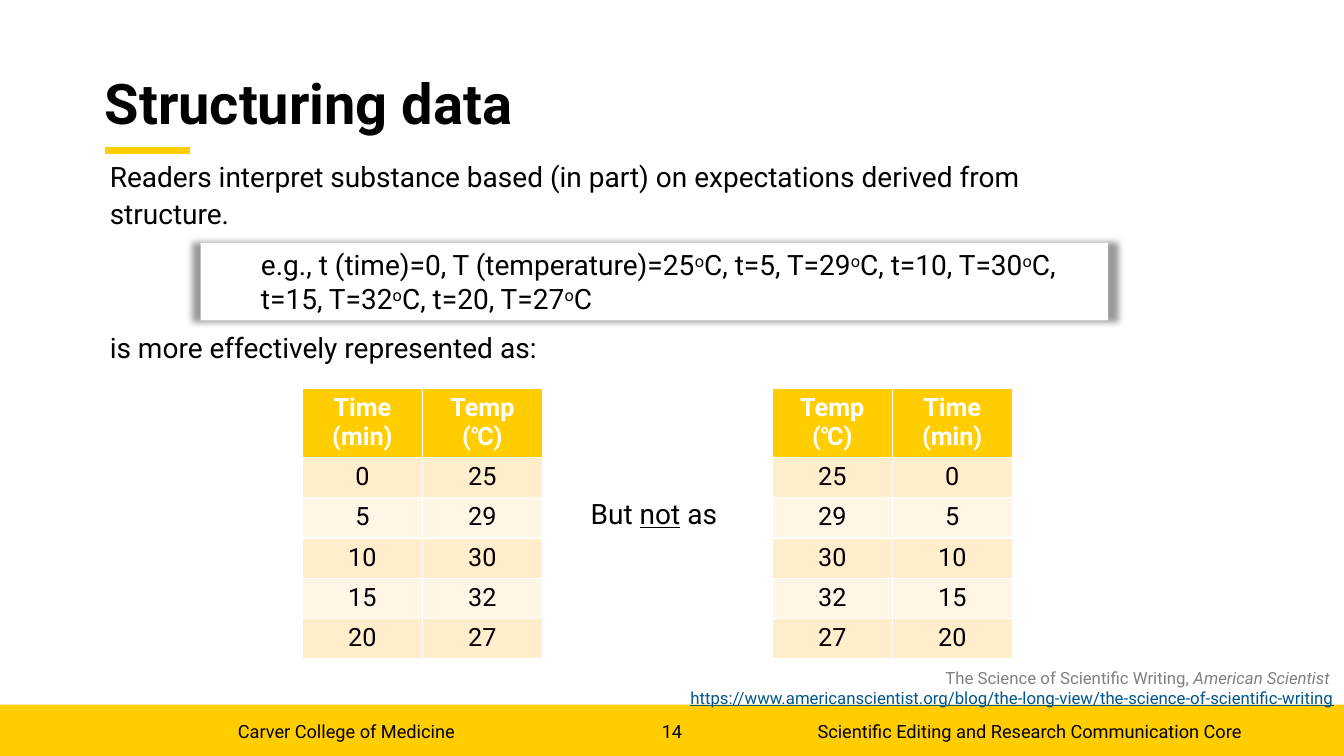
from dataclasses import dataclass, field

from lxml.etree import SubElement
from pptx import Presentation
from pptx.dml.color import RGBColor
from pptx.enum.shapes import MSO_CONNECTOR, MSO_SHAPE
from pptx.enum.text import MSO_ANCHOR, MSO_AUTO_SIZE, PP_ALIGN
from pptx.oxml.ns import qn
from pptx.shapes.autoshape import Shape
from pptx.slide import Slide
from pptx.util import Inches, Pt

PAGE_WIDTH = Inches(13.33)
PAGE_HEIGHT = Inches(7.5)


@dataclass(frozen=True)
class Theme:
    font: str = "Roboto"
    gold: str = "FFCD00"
    black: str = "000000"
    white: str = "FFFFFF"
    gray: str = "808080"
    link: str = "00558C"
    bands: tuple[str, str] = ("FFEDCC", "FFF6E7")
    title_size: int = 40
    body_size: int = 20
    table_size: int = 18
    footer_size: int = 13
    source_size: int = 12


THEME = Theme()


@dataclass(frozen=True)
class Area:
    """Percentages of the page's width and height."""

    left: float
    top: float
    width: float
    height: float

    def box(self) -> tuple[int, int, int, int]:
        return (across(self.left), down(self.top), across(self.width), down(self.height))


@dataclass(frozen=True)
class Span:
    text: str
    color: str = THEME.black
    bold: bool = False
    italic: bool = False
    underline: bool = False
    raised: bool = False


@dataclass(frozen=True)
class TextBlock:
    area: Area
    lines: list[list[Span]]
    size: int = THEME.body_size
    align: PP_ALIGN = PP_ALIGN.LEFT
    anchor: MSO_ANCHOR = MSO_ANCHOR.TOP
    spacing: float = 1.0
    inset: bool = True
    wrap: bool = True
    indent: float = 0


@dataclass(frozen=True)
class DataTable:
    left: float
    headers: tuple[str, str]
    rows: list[tuple[int, int]] = field(default_factory=list)


def across(share: float) -> int:
    return round(PAGE_WIDTH * share / 100)


def down(share: float) -> int:
    return round(PAGE_HEIGHT * share / 100)


def write_spans(para, spans: list[Span], size: int) -> None:
    for span in spans:
        run = para.add_run()
        run.text = span.text
        font = run.font
        font.name = THEME.font
        font.size = Pt(size)
        font.color.rgb = RGBColor.from_string(span.color)
        font.bold = span.bold
        font.italic = span.italic
        font.underline = span.underline
        if span.raised:
            run._r.get_or_add_rPr().set("baseline", "30000")


def fill_text(box: Shape, block: TextBlock) -> None:
    box.left, box.top, box.width, box.height = block.area.box()
    frame = box.text_frame
    frame.word_wrap = block.wrap
    frame.auto_size = MSO_AUTO_SIZE.NONE
    frame.vertical_anchor = block.anchor
    if not block.inset:
        frame.margin_left = frame.margin_top = frame.margin_right = frame.margin_bottom = 0
    for index, spans in enumerate(block.lines):
        para = frame.paragraphs[0] if index == 0 else frame.add_paragraph()
        para.alignment = block.align
        para.line_spacing = block.spacing
        para.space_before = Pt(0)
        if block.indent:
            para.level = 1
            properties = para._p.get_or_add_pPr()
            properties.set("marL", str(Inches(block.indent)))
            properties.set("indent", "0")
        write_spans(para, spans, block.size)


def add_text(page: Slide, block: TextBlock) -> None:
    fill_text(page.shapes.add_textbox(*block.area.box()), block)


def add_panel(page: Slide, area: Area, color: str) -> Shape:
    panel = page.shapes.add_shape(MSO_SHAPE.RECTANGLE, *area.box())
    panel.shadow.inherit = False
    panel.fill.solid()
    panel.fill.fore_color.rgb = RGBColor.from_string(color)
    panel.line.fill.background()
    return panel


def add_glow_shadow(panel: Shape) -> None:
    effects = panel._element.spPr.find(qn("a:effectLst"))
    shadow = SubElement(effects, qn("a:outerShdw"), blurRad=str(Pt(5)), sx="102000",
                        sy="102000", algn="ctr", rotWithShape="0")
    color = SubElement(shadow, qn("a:srgbClr"), val=THEME.black)
    SubElement(color, qn("a:alpha"), val="40000")


def add_title_rule(page: Slide) -> None:
    height = down(19.87)
    rule = page.shapes.add_connector(MSO_CONNECTOR.STRAIGHT, across(7.8), height, across(14.1), height)
    rule.line.color.rgb = RGBColor.from_string(THEME.gold)
    rule.line.width = Pt(5)
    SubElement(rule._element.spPr, qn("a:effectLst"))


def add_data_table(page: Slide, data: DataTable) -> None:
    area = Area(data.left, 51.33, 17.86, 35.2)
    grid = [data.headers, *data.rows]
    table = page.shapes.add_table(len(grid), len(data.headers), *area.box()).table
    table.horz_banding = False
    for row_index, values in enumerate(grid):
        is_header = row_index == 0
        table.rows[row_index].height = Inches(0.64 if is_header else 0.4)
        fill = THEME.gold if is_header else THEME.bands[(row_index - 1) % 2]
        color = THEME.white if is_header else THEME.black
        for column_index, value in enumerate(values):
            cell = table.cell(row_index, column_index)
            cell.fill.solid()
            cell.fill.fore_color.rgb = RGBColor.from_string(fill)
            para = cell.text_frame.paragraphs[0]
            para.alignment = PP_ALIGN.CENTER
            write_spans(para, [Span(str(value), color, bold=is_header)], THEME.table_size)


def example_spans() -> list[Span]:
    pieces = ["e.g., t (time)=0, T (temperature)=25", "C, t=5, T=29", "C, t=10, T=30",
              "C, t=15, T=32", "C, t=20, T=27", "C"]
    spans = [Span(pieces[0])]
    for piece in pieces[1:]:
        spans += [Span("o", raised=True), Span(piece)]
    return spans


TITLE = TextBlock(Area(7.8, 7.73, 84.4, 12.67), [[Span("Structuring data", bold=True)]],
                  THEME.title_size, anchor=MSO_ANCHOR.MIDDLE, spacing=0.9, inset=False)
EXAMPLE = TextBlock(Area(14.93, 32.13, 67.52, 10.27), [example_spans()], indent=0.5)
TEXTS = [
    TextBlock(Area(47.56, 95.33, 4.88, 3.47), [[Span("14")]], THEME.footer_size,
              PP_ALIGN.CENTER, inset=False),
    TextBlock(Area(17.7, 95.33, 23.71, 4.67), [[Span("Carver College of Medicine")]],
              THEME.footer_size, inset=False, wrap=False),
    TextBlock(Area(53.94, 94, 38.41, 5.33),
              [[Span("Scientific Editing and Research Communication Core")]],
              THEME.footer_size, PP_ALIGN.RIGHT, MSO_ANCHOR.MIDDLE, inset=False),
    TextBlock(Area(7.43, 20, 75.54, 15.73),
              [[Span("Readers interpret substance based (in part) on expectations "
                     "derived from structure.")]], spacing=1.1),
    TextBlock(Area(7.43, 43.07, 50.04, 5.87), [[Span("is more effectively represented as:")]]),
    TextBlock(Area(40.96, 65.07, 15.38, 5.87),
              [[Span("But "), Span("not", underline=True), Span(" as")]], align=PP_ALIGN.CENTER),
    TextBlock(Area(25.2, 87.6, 74.8, 6.67),
              [[Span("The Science of Scientific Writing, ", THEME.gray),
                Span("American Scientist ", THEME.gray, italic=True)],
               [Span("https://www.americanscientist.org/blog/the-long-view/"
                     "the-science-of-scientific-writing", THEME.link, underline=True)]],
              THEME.source_size, PP_ALIGN.RIGHT),
]
READINGS = [(0, 25), (5, 29), (10, 30), (15, 32), (20, 27)]
HEADERS = ("Time (min)", "Temp (℃)")
TABLES = [
    DataTable(22.5, HEADERS, READINGS),
    DataTable(57.46, HEADERS[::-1], [reading[::-1] for reading in READINGS]),
]


def main() -> None:
    deck = Presentation()
    deck.slide_width, deck.slide_height = PAGE_WIDTH, PAGE_HEIGHT
    page = deck.slides.add_slide(deck.slide_layouts[5])
    add_panel(page, Area(0, 93.2, 100, 6.8), THEME.gold)
    add_title_rule(page)
    fill_text(page.shapes.title, TITLE)
    for block in TEXTS:
        add_text(page, block)
    panel = add_panel(page, EXAMPLE.area, THEME.white)
    add_glow_shadow(panel)
    fill_text(panel, EXAMPLE)
    for data in TABLES:
        add_data_table(page, data)
    deck.save("out.pptx")


if __name__ == "__main__":
    main()
